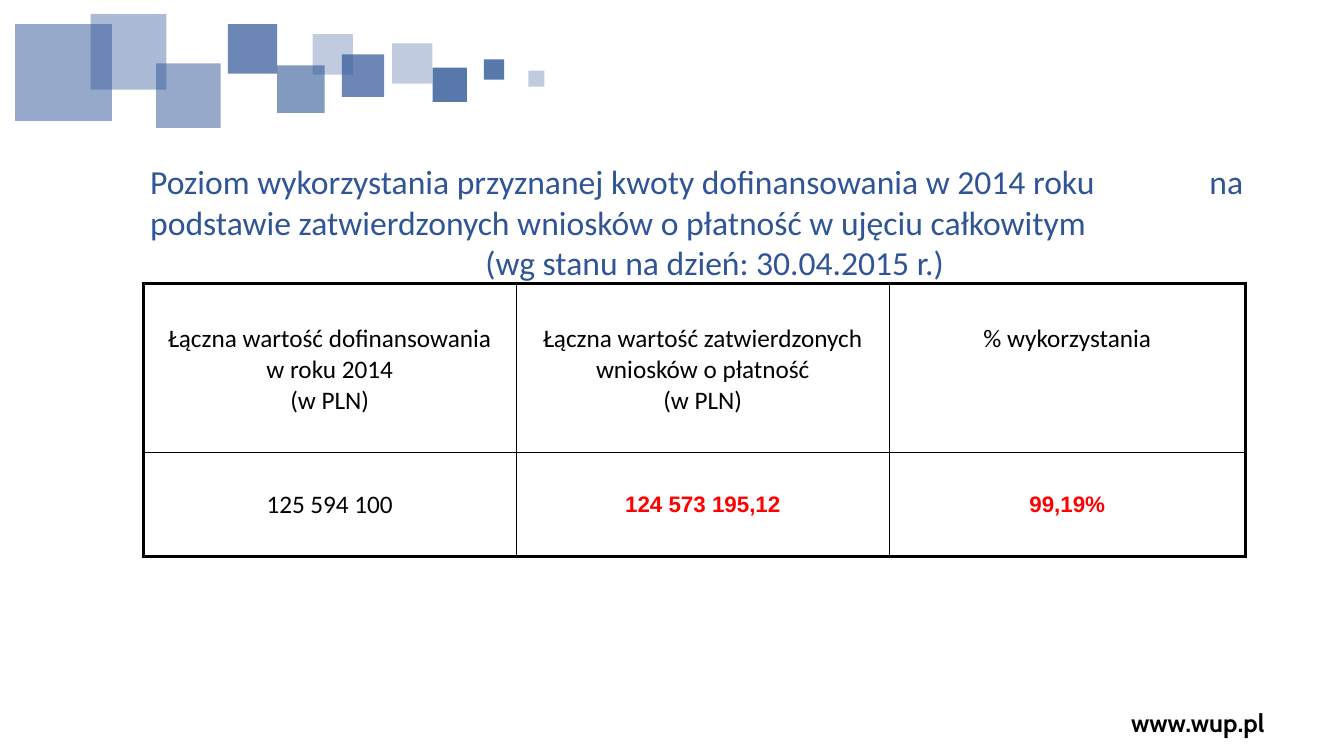
from lxml import etree
from pptx import Presentation
from pptx.dml.color import RGBColor
from pptx.enum.shapes import MSO_SHAPE
from pptx.enum.text import MSO_ANCHOR, PP_ALIGN
from pptx.oxml.ns import qn
from pptx.util import Inches, Pt

LEFT, CENTER = PP_ALIGN.LEFT, PP_ALIGN.CENTER
TOP, MIDDLE = MSO_ANCHOR.TOP, MSO_ANCHOR.MIDDLE
RECTANGLE = MSO_SHAPE.RECTANGLE

COLORS = {"blue": "2F5597", "black": "000000", "red": "FF0000", "white": "FFFFFF"}

SQUARES = [
    (3.89, 0.43, 0.40, 30),
    (4.29, 0.67, 0.34, 80),
    (3.39, 0.54, 0.42, 70),
    (0.15, 0.24, 0.96, 50),
    (2.75, 0.65, 0.47, 60),
    (1.55, 0.63, 0.64, 50),
    (0.90, 0.14, 0.75, 40),
    (4.80, 0.59, 0.20, 80),
    (2.26, 0.24, 0.49, 70),
    (3.10, 0.34, 0.40, 30),
    (5.24, 0.70, 0.16, 30),
]

WEBSITE = "www.wup.pl"
TITLE = [
    ("Poziom wykorzystania przyznanej kwoty dofinansowania w 2014 roku\tna", LEFT),
    ("podstawie zatwierdzonych wniosków o płatność w ujęciu całkowitym", LEFT),
    ("(wg stanu na dzień: 30.04.2015 r.)", CENTER),
]
TITLE_TAB = 10.84

HEADERS = [
    ["Łączna wartość dofinansowania w roku 2014", "(w PLN)"],
    ["Łączna wartość zatwierdzonych wniosków o płatność", "(w PLN)"],
    ["% wykorzystania"],
]
VALUES = ["125 594 100", "124 573 195,12", "99,19%"]
COLUMN_WIDTHS = [3.7, 3.7, 3.53]
ROW_HEIGHTS = [1.68, 1.03]
OUTER_LINE, INNER_LINE = 2.25, 1

HEADER_FORMAT = {"size": 18, "anchor": TOP, "margins": (0.13, 0.4, 0.13, 0.05)}
VALUE_FORMAT = {"size": 18, "anchor": MIDDLE}
RESULT_FORMAT = {"size": 16, "anchor": MIDDLE, "font": "Arial", "color": "red", "bold": True}


def rgb(name):
    return RGBColor.from_string(COLORS[name])


def write(holder, lines, size, font="Calibri", color="black", bold=False,
          anchor=TOP, margins=(0, 0, 0, 0), tab=None):
    frame = holder.text_frame
    frame.word_wrap = True
    holder.vertical_anchor = frame.vertical_anchor = anchor
    sides = ("margin_left", "margin_top", "margin_right", "margin_bottom")
    for side, margin in zip(sides, margins):
        setattr(holder, side, Inches(margin))
        setattr(frame, side, Inches(margin))
    for index, (text, alignment) in enumerate(lines):
        para = frame.paragraphs[0] if index == 0 else frame.add_paragraph()
        para.alignment = alignment
        if tab and "\t" in text:
            tabs = etree.SubElement(para._p.get_or_add_pPr(), qn("a:tabLst"))
            etree.SubElement(tabs, qn("a:tab"), pos=str(Inches(tab)), algn="r")
        span = para.add_run()
        span.text = text
        span.font.size = Pt(size)
        span.font.name = font
        span.font.bold = bold
        span.font.color.rgb = rgb(color)


def add_text(page, left, top, width, height, lines, **text_format):
    box = page.shapes.add_textbox(Inches(left), Inches(top), Inches(width), Inches(height))
    write(box, lines, **text_format)


def add_square(page, left, top, side, opacity):
    square = page.shapes.add_shape(
        RECTANGLE, Inches(left), Inches(top), Inches(side), Inches(side))
    square.shadow.inherit = False
    square.line.fill.background()
    square.fill.solid()
    square.fill.fore_color.rgb = rgb("blue")
    color = square._element.spPr.find(qn("a:solidFill"))[0]
    etree.SubElement(color, qn("a:alpha"), val=str(opacity * 1000))


def set_borders(cell, outer_edges):
    properties = cell._tc.get_or_add_tcPr()
    for index, (edge, outer) in enumerate(outer_edges.items()):
        width = OUTER_LINE if outer else INNER_LINE
        line = etree.Element(qn("a:ln" + edge), w=str(Pt(width)))
        fill = etree.SubElement(line, qn("a:solidFill"))
        etree.SubElement(fill, qn("a:srgbClr"), val=COLORS["black"])
        properties.insert(index, line)


def add_usage_table(page, left, top):
    rows, columns = len(ROW_HEIGHTS), len(COLUMN_WIDTHS)
    table = page.shapes.add_table(
        rows, columns, Inches(left), Inches(top),
        Inches(sum(COLUMN_WIDTHS)), Inches(sum(ROW_HEIGHTS))).table
    table.first_row = table.horz_banding = False
    for row, height in zip(table.rows, ROW_HEIGHTS):
        row.height = Inches(height)
    for column, width in enumerate(COLUMN_WIDTHS):
        table.columns[column].width = Inches(width)
        value_format = VALUE_FORMAT if column == 0 else RESULT_FORMAT
        contents = [(HEADERS[column], HEADER_FORMAT), ([VALUES[column]], value_format)]
        for row, (texts, text_format) in enumerate(contents):
            cell = table.cell(row, column)
            cell.fill.solid()
            cell.fill.fore_color.rgb = rgb("white")
            write(cell, [(text, CENTER) for text in texts], **text_format)
            set_borders(cell, {"L": column == 0, "R": column == columns - 1,
                               "T": row == 0, "B": row == rows - 1})


def main():
    deck = Presentation()
    deck.slide_width, deck.slide_height = Inches(13.33), Inches(7.5)
    page = deck.slides.add_slide(deck.slide_layouts[6])
    add_text(page, 10.38, 6.97, 3, 0.4, [(WEBSITE, CENTER)],
             size=18, font="Cabin", bold=True, anchor=MIDDLE)
    for square in SQUARES:
        add_square(page, *square)
    add_text(page, 1.49, 1.6, 11.2, 1.22, TITLE, size=24, color="blue", tab=TITLE_TAB)
    add_usage_table(page, 1.42, 2.81)
    deck.save("out.pptx")


if __name__ == "__main__":
    main()
